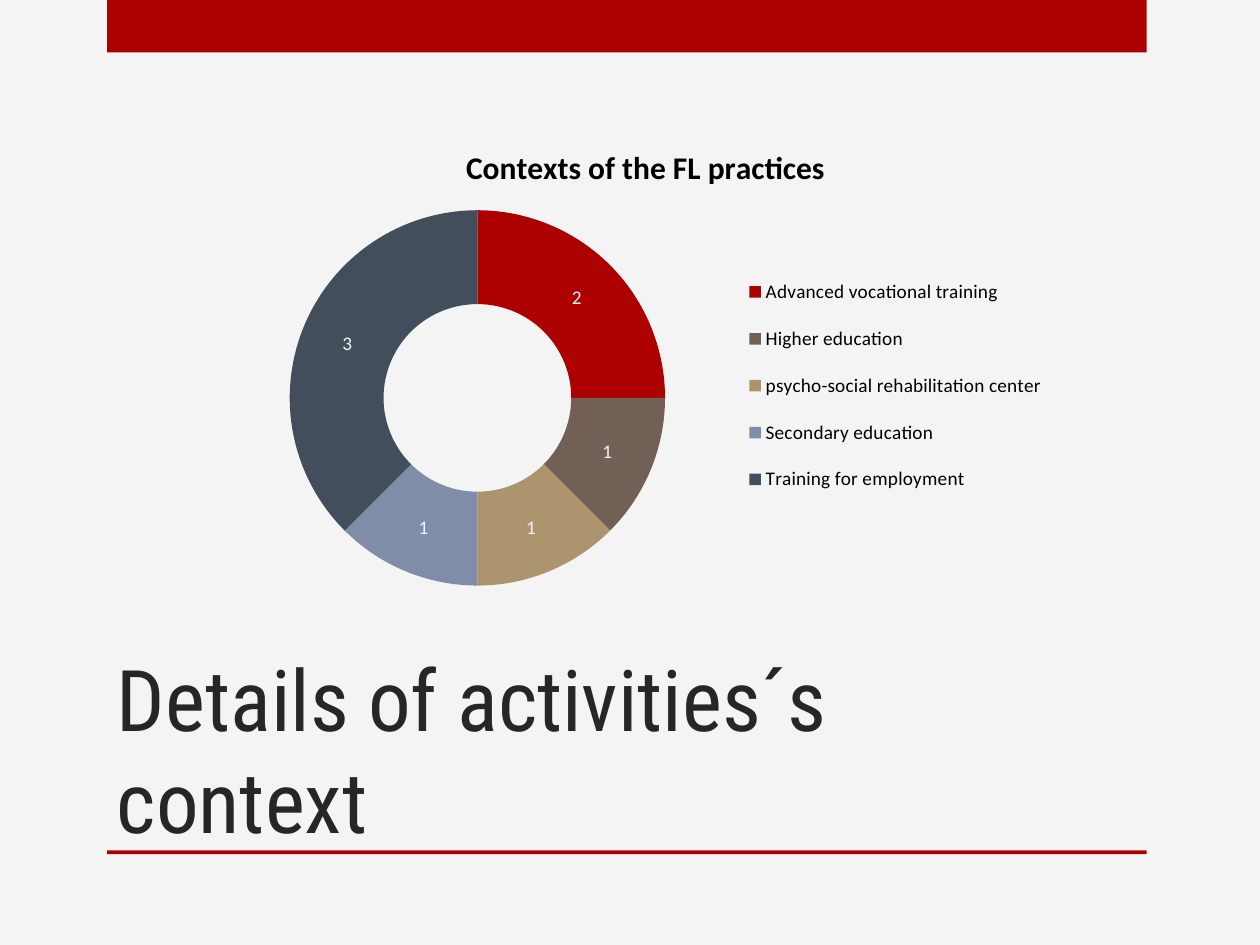
from lxml import etree
from pptx import Presentation
from pptx.chart.data import CategoryChartData
from pptx.dml.color import RGBColor
from pptx.enum.chart import XL_CHART_TYPE, XL_LEGEND_POSITION
from pptx.enum.shapes import MSO_SHAPE
from pptx.enum.text import MSO_ANCHOR
from pptx.oxml.ns import qn
from pptx.util import Pt

RECT = MSO_SHAPE.RECTANGLE
DOUGHNUT = XL_CHART_TYPE.DOUGHNUT
RIGHT = XL_LEGEND_POSITION.RIGHT
BOTTOM = MSO_ANCHOR.BOTTOM

COLORS = {
    "background": "F4F4F4",
    "red": "AD0101",
    "brown": "726056",
    "tan": "AC956E",
    "blue": "808DA9",
    "slate": "424E5B",
    "title": "262626",
    "black": "000000",
}

CONTEXTS = [
    ("Advanced vocational training", 2, "red"),
    ("Higher education", 1, "brown"),
    ("psycho-social rehabilitation center", 1, "tan"),
    ("Secondary education", 1, "blue"),
    ("Training for employment", 3, "slate"),
]


def rgb(name):
    return RGBColor.from_string(COLORS[name])


def paint(fill, color):
    fill.solid()
    fill.fore_color.rgb = rgb(color)


def style_font(font, name, size, color, bold=False):
    font.name = name
    font.size = Pt(size)
    font.bold = bold
    font.color.rgb = rgb(color)


def add_bar(s, y, h):
    sp = s.shapes.add_shape(RECT, Pt(61.2), Pt(y), Pt(594), Pt(h))
    sp.shadow.inherit = False
    paint(sp.fill, "red")
    sp.line.fill.background()


def add_title(s, text):
    sp = s.shapes.add_textbox(Pt(59.76), Pt(360), Pt(534.24), Pt(126))
    tf = sp.text_frame
    tf.word_wrap = True
    tf.vertical_anchor = BOTTOM
    tf.margin_bottom = Pt(0)
    tf.text = text
    style_font(tf.paragraphs[0].runs[0].font, "Roboto Condensed", 48.6, "title")


def place(parent, index, **fractions):
    for old in parent.findall(qn("c:layout")):
        parent.remove(old)
    layout = etree.Element(qn("c:layout"))
    manual = etree.SubElement(layout, qn("c:manualLayout"))
    settings = {"xMode": "edge", "yMode": "edge", **fractions}
    for tag, value in settings.items():
        etree.SubElement(manual, qn(f"c:{tag}")).set("val", str(value))
    parent.insert(index, layout)


def add_doughnut(s, title):
    data = CategoryChartData()
    data.categories = [name for name, _, _ in CONTEXTS]
    data.add_series("Series 1", [value for _, value, _ in CONTEXTS])
    frame = s.shapes.add_chart(
        DOUGHNUT, Pt(121.68), Pt(66.24), Pt(487.44), Pt(277.92), data)
    chart = frame.chart
    style_font(chart.font, "Calibri", 10, "black")

    chart.has_title = True
    tf = chart.chart_title.text_frame
    tf.text = title
    style_font(tf.paragraphs[0].runs[0].font, "Calibri", 18, "black", True)

    chart.has_legend = True
    chart.legend.position = RIGHT
    chart.legend.include_in_layout = False
    style_font(chart.legend.font, "Calibri", 11, "black")

    plot = chart.plots[0]
    plot.vary_by_categories = True
    for i, (_, _, color) in enumerate(CONTEXTS):
        paint(plot.series[0].points[i].format.fill, color)
    plot.has_data_labels = True
    labels = plot.data_labels
    labels.show_value = True
    labels.show_percentage = False
    style_font(labels.font, "Calibri", 11, "background")

    root = chart.element.find(qn("c:chart"))
    place(root.find(qn("c:title")), 1, x=0.29, y=0.05)
    place(root.find(qn("c:legend")), 1, x=0.62, y=0.29, w=0.36, h=0.53)
    area = root.find(qn("c:plotArea"))
    place(area, 0, layoutTarget="inner", x=0.09, y=0.19, w=0.44, h=0.78)
    manual = area.find(qn("c:layout")).find(qn("c:manualLayout"))
    manual.insert(0, manual.find(qn("c:layoutTarget")))


def main():
    prs = Presentation()
    prs.slide_width, prs.slide_height = Pt(720), Pt(540)
    s = prs.slides.add_slide(prs.slide_layouts[6])
    paint(s.background.fill, "background")
    add_bar(s, 0, 30)
    add_bar(s, 486, 2.16)
    add_title(s, "Details of activities´s context")
    add_doughnut(s, "Contexts of the FL practices")
    prs.save("out.pptx")


if __name__ == "__main__":
    main()
